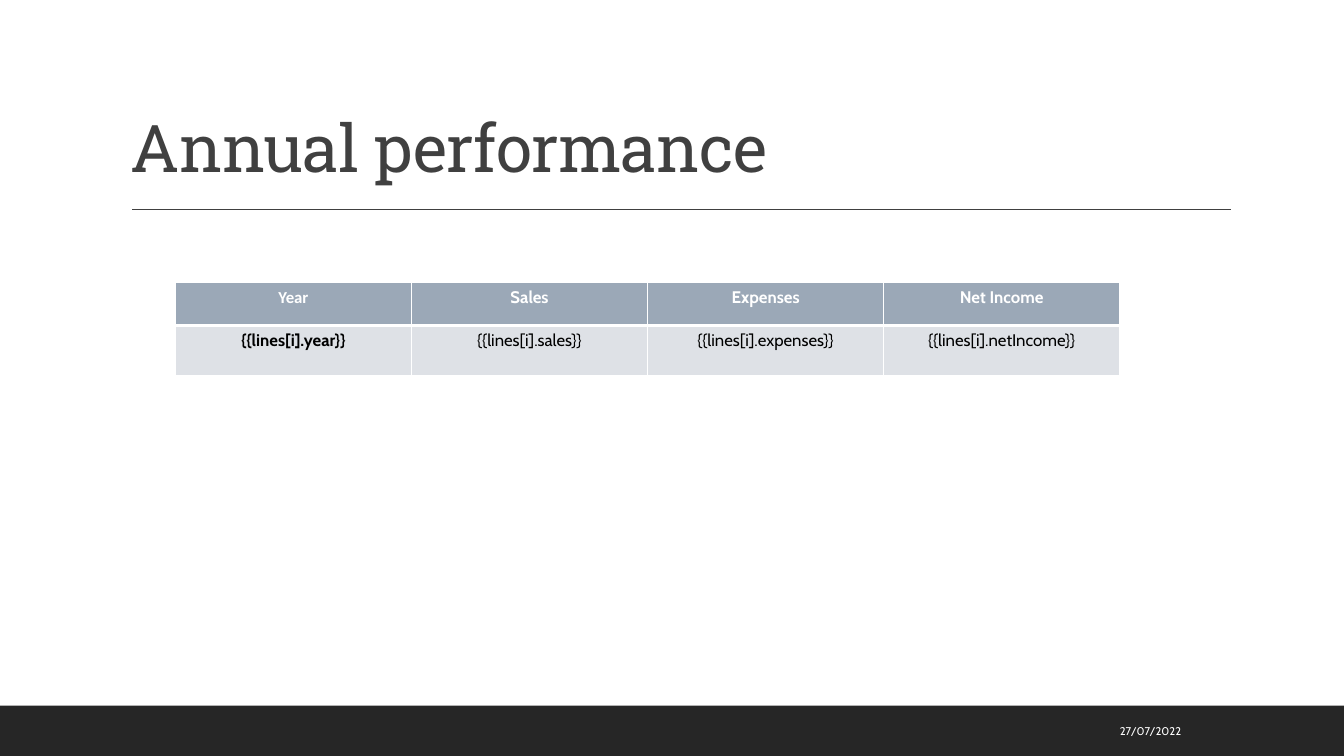
from dataclasses import dataclass

from lxml.etree import SubElement
from pptx import Presentation
from pptx.dml.color import RGBColor
from pptx.enum.shapes import MSO_CONNECTOR, MSO_SHAPE
from pptx.enum.text import MSO_ANCHOR, PP_ALIGN
from pptx.oxml.ns import qn
from pptx.slide import Slide
from pptx.text.text import TextFrame
from pptx.util import Cm, Pt


@dataclass(frozen=True)
class Theme:
    white: str = "FFFFFF"
    black: str = "000000"
    ink: str = "404040"
    footer: str = "262626"
    header: str = "9BA8B7"
    body: str = "DEE1E6"
    heading_font: str = "Roboto Slab"
    body_font: str = "Cabin"
    year_font: str = "Calibri"
    title_size: float = 47
    table_size: float = 12
    date_size: float = 8


@dataclass(frozen=True)
class Area:
    left: float
    top: float
    width: float
    height: float

    def lengths(self) -> tuple[Cm, Cm, Cm, Cm]:
        return Cm(self.left), Cm(self.top), Cm(self.width), Cm(self.height)


@dataclass(frozen=True)
class Column:
    label: str
    field: str
    label_font: str
    field_bold: bool = False


THEME = Theme()
COLUMNS = (
    Column("Year", "{{lines[i].year}}", THEME.year_font, True),
    Column("Sales", "{{lines[i].sales}}", THEME.body_font),
    Column("Expenses", "{{lines[i].expenses}}", THEME.body_font),
    Column("Net Income", "{{lines[i].netIncome}}", THEME.body_font),
)
TABLE_AREA = Area(4.42, 7.11, 23.8, 2.36)
ROW_HEIGHTS = (1.09, 1.27)


def colour(code: str) -> RGBColor:
    return RGBColor.from_string(code)


def write(frame: TextFrame, text: str, *, font: str, size: float, ink: str,
          bold: bool = False, align: PP_ALIGN = PP_ALIGN.LEFT,
          line_spacing: float = 1.0, tracking: int = 0) -> None:
    para = frame.paragraphs[0]
    para.alignment = align
    para.line_spacing = line_spacing
    span = para.add_run()
    span.text = text
    span.font.name = font
    span.font.size = Pt(size)
    span.font.bold = bold
    span.font.color.rgb = colour(ink)
    if tracking:
        span.font._element.set("spc", str(tracking))


def add_text_frame(slide: Slide, area: Area, anchor: MSO_ANCHOR) -> TextFrame:
    frame = slide.shapes.add_textbox(*area.lengths()).text_frame
    frame.word_wrap = True
    frame.vertical_anchor = anchor
    return frame


def add_footer(slide: Slide) -> None:
    bar = slide.shapes.add_shape(MSO_SHAPE.RECTANGLE, *Area(0, 17.78, 33.87, 1.27).lengths())
    bar.shadow.inherit = False
    bar.fill.solid()
    bar.fill.fore_color.rgb = colour(THEME.footer)
    bar.line.fill.background()


def add_rule(slide: Slide) -> None:
    rule = slide.shapes.add_connector(
        MSO_CONNECTOR.STRAIGHT, Cm(3.33), Cm(5.28), Cm(31.01), Cm(5.28))
    rule.line.color.rgb = colour(THEME.ink)
    rule.line.width = Pt(1)
    SubElement(rule._element.spPr, qn("a:effectLst"))


def add_borders(cell, top: float, bottom: float) -> None:
    properties = cell._tc.get_or_add_tcPr()
    for side, width in (("L", 1), ("R", 1), ("T", top), ("B", bottom)):
        border = SubElement(properties, qn(f"a:ln{side}"), w=str(Pt(width)))
        fill = SubElement(border, qn("a:solidFill"))
        SubElement(fill, qn("a:srgbClr"), val=THEME.white)


def fill_cell(cell, text: str, *, fill: str, font: str, ink: str, bold: bool,
              top: float, bottom: float) -> None:
    add_borders(cell, top, bottom)
    cell.fill.solid()
    cell.fill.fore_color.rgb = colour(fill)
    write(cell.text_frame, text, font=font, size=THEME.table_size, ink=ink,
          bold=bold, align=PP_ALIGN.CENTER)


def add_performance_table(slide: Slide) -> None:
    table = slide.shapes.add_table(
        len(ROW_HEIGHTS), len(COLUMNS), *TABLE_AREA.lengths()).table
    for row, height in zip(table.rows, ROW_HEIGHTS):
        row.height = Cm(height)
    for index, column in enumerate(COLUMNS):
        table.columns[index].width = Cm(TABLE_AREA.width / len(COLUMNS))
        fill_cell(table.cell(0, index), column.label, fill=THEME.header,
                  font=column.label_font, ink=THEME.white, bold=True, top=1, bottom=3)
        fill_cell(table.cell(1, index), column.field, fill=THEME.body,
                  font=THEME.body_font, ink=THEME.black, bold=column.field_bold,
                  top=3, bottom=1)


def main() -> None:
    deck = Presentation()
    deck.slide_width, deck.slide_height = Cm(33.87), Cm(19.05)
    slide = deck.slides.add_slide(deck.slide_layouts[6])
    add_footer(slide)
    add_rule(slide)
    title = add_text_frame(slide, Area(3.05, 0.79, 27.94, 4.04), MSO_ANCHOR.BOTTOM)
    write(title, "Annual performance", font=THEME.heading_font, size=THEME.title_size,
          ink=THEME.ink, line_spacing=0.9, tracking=-50)
    date = add_text_frame(slide, Area(22.83, 17.91, 7.19, 1.02), MSO_ANCHOR.MIDDLE)
    write(date, "27/07/2022", font=THEME.body_font, size=THEME.date_size,
          ink=THEME.white, align=PP_ALIGN.RIGHT)
    add_performance_table(slide)
    deck.save("out.pptx")


if __name__ == "__main__":
    main()
